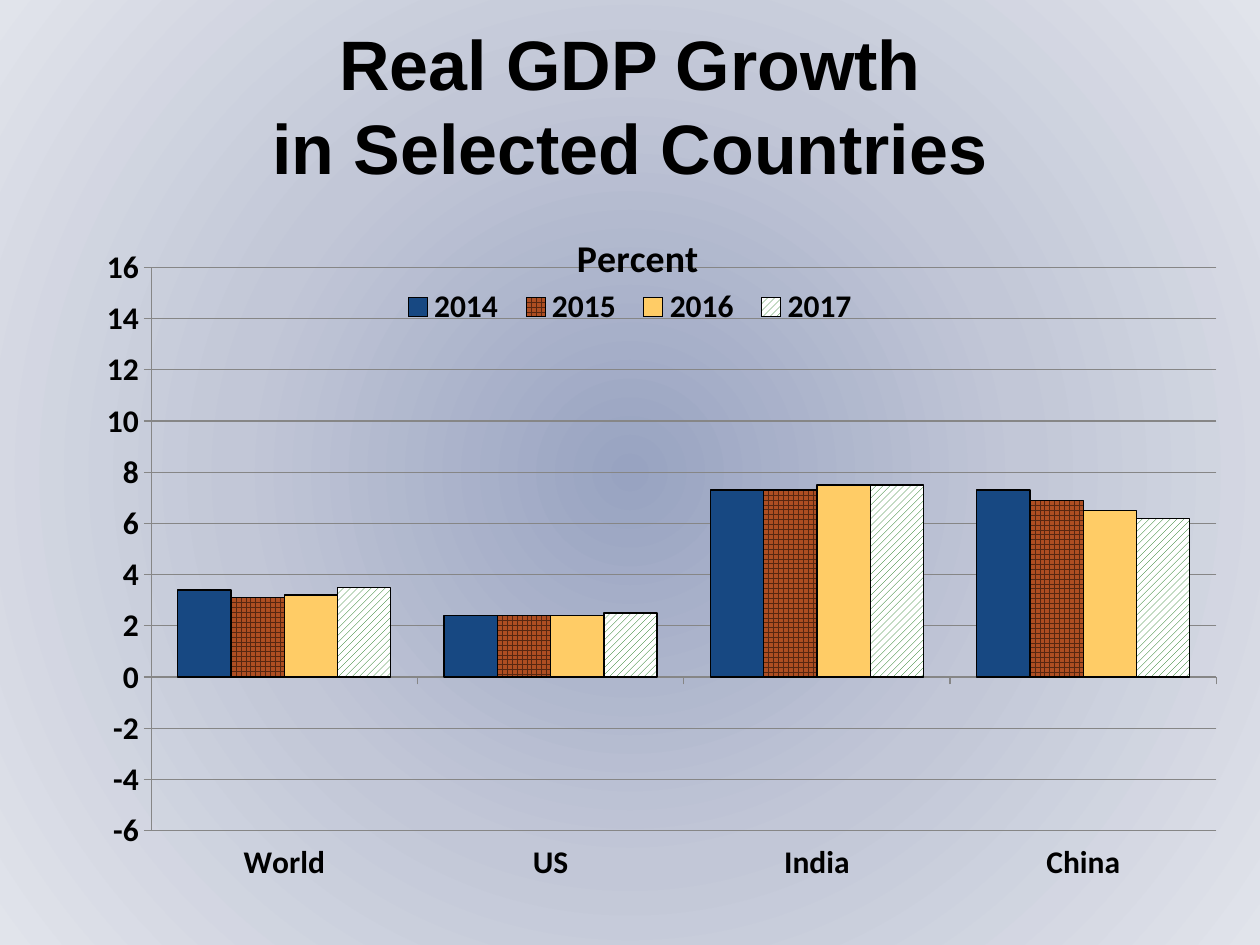
from pptx import Presentation
from pptx.chart.data import CategoryChartData
from pptx.dml.color import RGBColor
from pptx.enum.chart import XL_CHART_TYPE, XL_LEGEND_POSITION, XL_TICK_LABEL_POSITION, XL_TICK_MARK
from pptx.enum.dml import MSO_PATTERN
from pptx.enum.text import MSO_ANCHOR, PP_ALIGN
from pptx.oxml import parse_xml
from pptx.oxml.ns import nsdecls, qn
from pptx.util import Inches, Pt

COLUMN = XL_CHART_TYPE.COLUMN_CLUSTERED
TOP = XL_LEGEND_POSITION.TOP
LOW = XL_TICK_LABEL_POSITION.LOW
OUT, NONE = XL_TICK_MARK.OUTSIDE, XL_TICK_MARK.NONE
GRID, DIAG = MSO_PATTERN.LARGE_GRID, MSO_PATTERN.WIDE_UPWARD_DIAGONAL
MIDDLE, CENTER = MSO_ANCHOR.MIDDLE, PP_ALIGN.CENTER

BLACK = RGBColor(0x00, 0x00, 0x00)
GRAY = RGBColor(0x86, 0x86, 0x86)
BLUE = RGBColor(0x17, 0x48, 0x82)
BROWN = RGBColor(0x57, 0x27, 0x11)
RUST = RGBColor(0xAE, 0x4E, 0x22)
GOLD = RGBColor(0xFF, 0xCC, 0x66)
GREEN = RGBColor(0x00, 0x66, 0x00)
WHITE = RGBColor(0xFF, 0xFF, 0xFF)
GLOW = [(0, RGBColor(0x98, 0xA3, 0xC1)),
        (50, RGBColor(0xC2, 0xC7, 0xD7)),
        (100, RGBColor(0xE1, 0xE4, 0xEB))]

# Content
TITLE = ["Real GDP Growth", "in Selected Countries"]
UNIT = "Percent"
PLACES = ["World", "US", "India", "China"]
YEARS = [  # name, values, fill colour, pattern, pattern line colour
    ("2014", (3.4, 2.4, 7.3, 7.3), BLUE, None, None),
    ("2015", (3.1, 2.4, 7.3, 6.9), RUST, GRID, BROWN),
    ("2016", (3.2, 2.4, 7.5, 6.5), GOLD, None, None),
    ("2017", (3.5, 2.5, 7.5, 6.2), WHITE, DIAG, GREEN),
]

# Frame
WIDE, HIGH = 10, 7.5
EDGE = 0.25
SPAN = WIDE - 2 * EDGE


def style(font, name, size):
    font.name, font.size, font.bold = name, Pt(size), True
    font.color.rgb = BLACK


def place(part, follow, x, y, w=None, h=None, inner=False):
    """Set a manual layout, in shares of the chart, ahead of a child."""
    for old in part.findall(qn("c:layout")):
        part.remove(old)
    rows = '<c:layoutTarget val="inner"/>' if inner else ""
    rows += '<c:xMode val="edge"/><c:yMode val="edge"/>'
    for tag, share in zip("xywh", (x, y, w, h)):
        if share is not None:
            rows += f'<c:{tag} val="{share}"/>'
    part.find(qn(follow)).addprevious(parse_xml(
        f'<c:layout {nsdecls("c")}><c:manualLayout>{rows}'
        '</c:manualLayout></c:layout>'))


deck = Presentation()
deck.slide_width, deck.slide_height = Inches(WIDE), Inches(HIGH)
slide = deck.slides.add_slide(deck.slide_layouts[6])

# Radial background
slide.background.fill.solid()
solid = next(slide.element.iter(qn("a:solidFill")))
stops = "".join(f'<a:gs pos="{pos * 1000}"><a:srgbClr val="{tone}"/></a:gs>'
                for pos, tone in GLOW)
solid.getparent().replace(solid, parse_xml(
    f'<a:gradFill {nsdecls("a")} rotWithShape="1"><a:gsLst>{stops}</a:gsLst>'
    '<a:path path="circle"><a:fillToRect l="50000" t="50000" r="50000" b="50000"/>'
    '</a:path></a:gradFill>'))

# Title
box = slide.shapes.add_textbox(Inches(EDGE), Inches(0.33), Inches(SPAN), Inches(1))
frame = box.text_frame
frame.word_wrap, frame.vertical_anchor = True, MIDDLE
for i, line in enumerate(TITLE):
    para = frame.add_paragraph() if i else frame.paragraphs[0]
    para.alignment = CENTER
    run = para.add_run()
    run.text = line
    style(run.font, "Arial", 40)

# Chart
data = CategoryChartData()
data.categories = PLACES
for name, vals, *_ in YEARS:
    data.add_series(name, vals)
chart = slide.shapes.add_chart(COLUMN, Inches(EDGE), Inches(1.5),
                               Inches(SPAN), Inches(5.66), data).chart
style(chart.font, "Calibri", 18)
plot = chart.plots[0]
plot.gap_width, plot.overlap, plot.vary_by_categories = 100, 0, False
place(chart.element.find(".//" + qn("c:plotArea")), "c:barChart",
      0.1, 0.11, 0.89, 0.79, inner=True)

# Bars
for bars, (_, _, tone, weave, ink) in zip(plot.series, YEARS):
    fill, line = bars.format.fill, bars.format.line
    if weave:
        fill.patterned()
        fill.pattern = weave
        fill.fore_color.rgb, fill.back_color.rgb = ink, tone
    else:
        fill.solid()
        fill.fore_color.rgb = tone
    line.color.rgb, line.width = BLACK, Pt(0.75)

# Axes
cat, val = chart.category_axis, chart.value_axis
cat.tick_label_position = LOW
val.minimum_scale, val.maximum_scale, val.major_unit = -6, 16, 2
val.has_major_gridlines = True
for axis in (cat, val):
    axis.major_tick_mark, axis.minor_tick_mark = OUT, NONE
for part in (cat, val, val.major_gridlines):
    part.format.line.color.rgb = GRAY
    part.format.line.width = Pt(0.75)

# Chart title and legend
chart.has_title = True
run = chart.chart_title.text_frame.paragraphs[0].add_run()
run.text = UNIT
style(run.font, "Calibri", 21.6)
place(chart.element.find(".//" + qn("c:title")), "c:overlay", 0.45, 0.05)
chart.has_legend = True
chart.legend.position = TOP
chart.legend.include_in_layout = True
place(chart.element.find(".//" + qn("c:legend")), "c:overlay", 0.3, 0.13, 0.4, 0.07)

deck.save("out.pptx")
